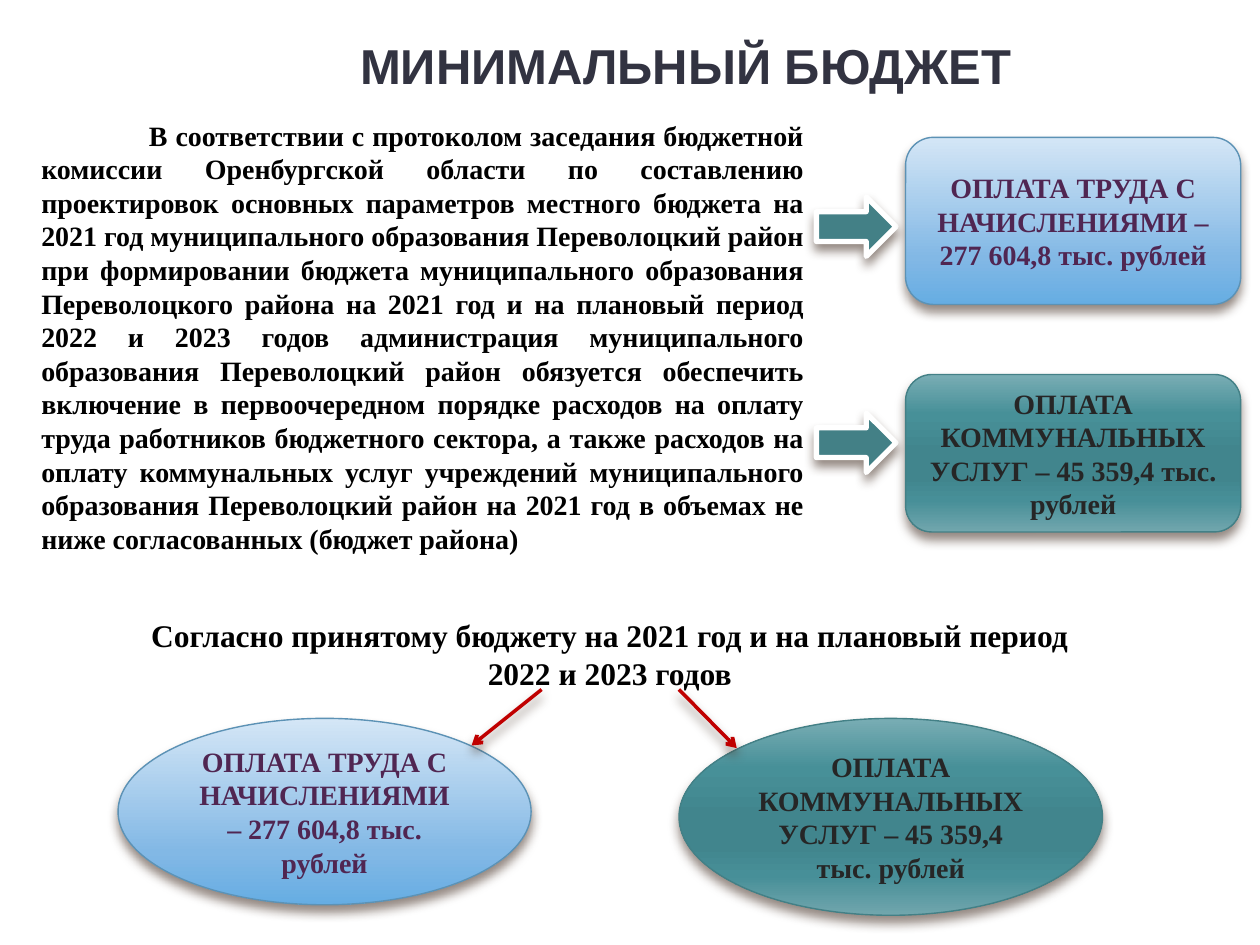
from lxml import etree
from pptx import Presentation
from pptx.dml.color import RGBColor
from pptx.enum.shapes import MSO_CONNECTOR, MSO_SHAPE
from pptx.enum.text import MSO_ANCHOR, PP_ALIGN
from pptx.oxml import parse_xml
from pptx.oxml.ns import nsdecls, qn
from pptx.util import Pt

ARROW = MSO_SHAPE.RIGHT_ARROW
ROUNDED = MSO_SHAPE.ROUNDED_RECTANGLE
ELLIPSE = MSO_SHAPE.OVAL
STRAIGHT = MSO_CONNECTOR.STRAIGHT
MIDDLE = MSO_ANCHOR.MIDDLE
CENTER = PP_ALIGN.CENTER
JUSTIFY = PP_ALIGN.JUSTIFY

COLORS = {
    "title": "323341", "body": "000000", "arrow": "438086", "white": "FFFFFF",
    "pointer": "C00000", "shadow": "4E3B30",
}
WAGES = {
    "text": "ОПЛАТА ТРУДА С НАЧИСЛЕНИЯМИ – 277 604,8 тыс. рублей",
    "color": "502652", "line": "5C92B5",
    "stops": [(0, "D4E6F6"), (72, "82B8E5"), (100, "66ADE3")],
}
UTILITIES = {
    "text": "ОПЛАТА КОММУНАЛЬНЫХ УСЛУГ – 45 359,4 тыс. рублей",
    "color": "262626", "line": "438086",
    "stops": [(0, "79ADB4"), (25, "479098"), (50, "41858D"),
              (65, "41858D"), (80, "478F98"), (100, "71A6AD")],
}
PROTOCOL = (
    "В соответствии с протоколом заседания бюджетной комиссии Оренбургской области "
    "по составлению проектировок основных параметров местного бюджета на 2021 год "
    "муниципального образования Переволоцкий район при формировании бюджета "
    "муниципального образования Переволоцкого района на 2021 год и на плановый период "
    "2022 и 2023 годов администрация муниципального образования Переволоцкий район "
    "обязуется обеспечить включение в первоочередном порядке расходов на оплату труда "
    "работников бюджетного сектора, а также расходов на оплату коммунальных услуг "
    "учреждений муниципального образования Переволоцкий район на 2021 год в объемах "
    "не ниже согласованных (бюджет района)"
)
DECISION = "Согласно принятому бюджету на 2021 год и на плановый период 2022 и 2023 годов"


def points(values):
    return [Pt(value) for value in values]


class SlideBuilder:
    def __init__(self, slide, font="Times New Roman", size=16):
        self.slide = slide
        self.font = font
        self.size = size

    def fill_text(self, shape, text, color, size=None, font=None, align=CENTER):
        shape.text_frame.word_wrap = True
        paragraph = shape.text_frame.paragraphs[0]
        paragraph.text = text
        paragraph.alignment = align
        paragraph.font.name = font or self.font
        paragraph.font.size = Pt(size or self.size)
        paragraph.font.bold = True
        paragraph.font.color.rgb = RGBColor.from_string(color)
        return paragraph

    def outline(self, shape, color, width):
        shape.line.color.rgb = RGBColor.from_string(color)
        shape.line.width = Pt(width)

    def cast_shadow(self, shape):
        """Add a soft shadow below; call it after the line is set."""
        shape._element.spPr.append(parse_xml(
            f'<a:effectLst {nsdecls("a")}>'
            f'<a:outerShdw blurRad="{Pt(6)}" dist="{Pt(4)}" dir="5400000" rotWithShape="0">'
            f'<a:srgbClr val="{COLORS["shadow"]}"><a:alpha val="60000"/></a:srgbClr>'
            '</a:outerShdw></a:effectLst>'))

    def title(self, text, box):
        title = self.slide.shapes.title
        title.left, title.top, title.width, title.height = points(box)
        title.text_frame.vertical_anchor = MIDDLE
        self.fill_text(title, text, COLORS["title"], 28, "Arial")

    def text(self, text, box, size=None, align=CENTER, first_indent=0):
        shape = self.slide.shapes.add_textbox(*points(box))
        paragraph = self.fill_text(shape, text, COLORS["body"], size, align=align)
        if first_indent:
            paragraph._p.get_or_add_pPr().set("indent", str(Pt(first_indent)))

    def block_arrow(self, box):
        shape = self.slide.shapes.add_shape(ARROW, *points(box))
        shape.fill.solid()
        shape.fill.fore_color.rgb = RGBColor.from_string(COLORS["arrow"])
        self.outline(shape, COLORS["white"], 3)
        self.cast_shadow(shape)

    def expense(self, kind, item, box):
        """Add a gradient shape that names one expense item."""
        shape = self.slide.shapes.add_shape(kind, *points(box))
        shape.fill.gradient()
        shape.fill.gradient_angle = 270
        stop_list = shape._element.spPr.find(".//" + qn("a:gsLst"))
        stop_list.clear()
        for position, color in item["stops"]:
            stop = etree.SubElement(stop_list, qn("a:gs"), pos=str(position * 1000))
            etree.SubElement(stop, qn("a:srgbClr"), val=color)
        self.outline(shape, item["line"], 0.79)
        self.cast_shadow(shape)
        shape.text_frame.vertical_anchor = MIDDLE
        self.fill_text(shape, item["text"], item["color"])

    def pointer(self, start, end):
        connector = self.slide.shapes.add_connector(STRAIGHT, *points(start + end))
        self.outline(connector, COLORS["pointer"], 2)
        line = connector.line._get_or_add_ln()
        etree.SubElement(line, qn("a:tailEnd"), type="arrow")
        self.cast_shadow(connector)


def main():
    presentation = Presentation()
    presentation.slide_width, presentation.slide_height = Pt(720), Pt(540)
    slide = presentation.slides.add_slide(presentation.slide_layouts[5])
    builder = SlideBuilder(slide)

    builder.title("МИНИМАЛЬНЫЙ БЮДЖЕТ", (111, 16.5, 561.5, 41))
    builder.text(PROTOCOL, (16.5, 64, 450, 279), align=JUSTIFY, first_indent=61.5)
    for top in (112.5, 236):
        builder.block_arrow((466.5, top, 45.5, 34))
    builder.expense(ROUNDED, WAGES, (517.5, 78.5, 191.5, 95.5))
    builder.expense(ROUNDED, UTILITIES, (517.5, 214, 191.5, 90))

    builder.text(DECISION, (78.5, 348.5, 540, 51), size=18)
    builder.expense(ELLIPSE, UTILITIES, (388, 410.5, 242, 112.5))
    builder.expense(ELLIPSE, WAGES, (67.5, 410.5, 236, 106.5))
    builder.pointer((309.5, 394), (269.5, 426))
    builder.pointer((388, 394), (421, 427.5))

    presentation.save("out.pptx")


if __name__ == "__main__":
    main()
